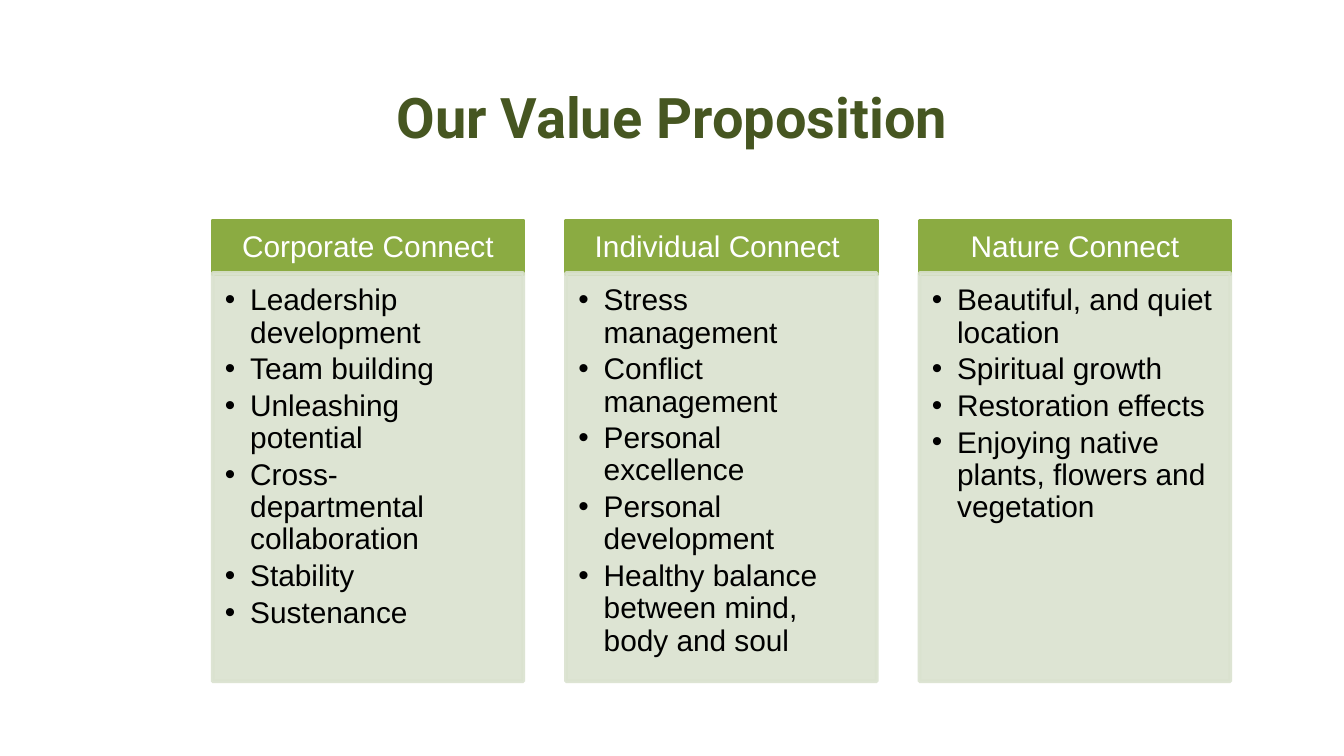
"""Build the value proposition slide with three bulleted columns."""
from lxml.etree import SubElement
from pptx import Presentation
from pptx.dml.color import RGBColor
from pptx.enum.shapes import MSO_SHAPE
from pptx.enum.text import MSO_ANCHOR, PP_ALIGN
from pptx.oxml.ns import qn
from pptx.util import Cm, Pt

DARK_GREEN = RGBColor(0x46, 0x56, 0x21)
GREEN = RGBColor(0x8B, 0xAB, 0x42)
PALE_GREEN = RGBColor(0xDA, 0xE2, 0xCF)
WHITE = RGBColor(0xFF, 0xFF, 0xFF)
BLACK = RGBColor(0x00, 0x00, 0x00)

COLUMNS = {
    "Corporate Connect": [
        "Leadership development", "Team building", "Unleashing potential",
        "Cross-departmental collaboration", "Stability", "Sustenance",
    ],
    "Individual Connect ": [
        "Stress management", "Conflict management", "Personal excellence",
        "Personal development", "Healthy balance between mind, body and soul",
    ],
    "Nature Connect": [
        "Beautiful, and quiet location", "Spiritual growth", "Restoration effects",
        "Enjoying native plants, flowers and vegetation",
    ],
}
LEFT, PITCH, WIDTH = 4.02, 6.68, 5.87


class SlideBuilder:
    def __init__(self, page):
        self.page = page
        self.font = "Arial"
        self.size = 16

    def add_span(self, para, text, color, font=None, size=None, bold=False):
        span = para.add_run()
        span.text = text
        span.font.name = font or self.font
        span.font.size = Pt(size or self.size)
        span.font.bold = bold
        span.font.color.rgb = color

    def frame(self, box, insets, anchor=MSO_ANCHOR.TOP):
        frame = box.text_frame
        frame.word_wrap = True
        frame.vertical_anchor = anchor
        frame.margin_left, frame.margin_top, frame.margin_right, frame.margin_bottom = map(Cm, insets)
        return frame

    def title(self, text):
        box = self.page.shapes.add_textbox(Cm(1.27), Cm(1.32), Cm(22.86), Cm(1.75))
        para = self.frame(box, (0.25, 0.25, 0.25, 0.25)).paragraphs[0]
        para.alignment = PP_ALIGN.CENTER
        para.space_before = Pt(6)
        self.add_span(para, text, DARK_GREEN, "Roboto", 30, True)

    def panel(self, left, top, height, color):
        box = self.page.shapes.add_shape(
            MSO_SHAPE.RECTANGLE, Cm(left), Cm(top), Cm(WIDTH), Cm(height))
        box.shadow.inherit = False
        box.fill.solid()
        box.fill.fore_color.rgb = color
        box.line.color.rgb = color
        box.line.width = Pt(2)
        return box

    def heading(self, left, text):
        box = self.panel(left, 4.17, 1.02, GREEN)
        para = self.frame(box, (0.3, 0.18, 0.3, 0.18), MSO_ANCHOR.MIDDLE).paragraphs[0]
        para.alignment = PP_ALIGN.CENTER
        para.line_spacing = 0.9
        self.add_span(para, text, WHITE)

    def bullets(self, left, items):
        box = self.panel(left, 5.16, 7.72, PALE_GREEN)
        for color in box._element.spPr.iter(qn("a:srgbClr")):
            SubElement(color, qn("a:alpha"), val="90000")
        frame = self.frame(box, (0.23, 0.23, 0.3, 0.36))
        for index, item in enumerate(items):
            para = frame.add_paragraph() if index else frame.paragraphs[0]
            para.alignment = PP_ALIGN.LEFT
            para.level = 1
            para.line_spacing = 0.9
            para.space_after = Pt(2.4)
            properties = para._p.get_or_add_pPr()
            properties.set("marL", str(Cm(0.48)))
            properties.set("indent", str(-Cm(0.48)))
            SubElement(properties, qn("a:buFont"), typeface=self.font)
            SubElement(properties, qn("a:buChar"), char="•")
            self.add_span(para, item, BLACK)


def main():
    deck = Presentation()
    deck.slide_width, deck.slide_height = Cm(25.4), Cm(14.29)
    builder = SlideBuilder(deck.slides.add_slide(deck.slide_layouts[6]))
    builder.title("Our Value Proposition")
    for index, (heading, items) in enumerate(COLUMNS.items()):
        left = LEFT + index * PITCH
        builder.heading(left, heading)
        builder.bullets(left, items)
    deck.save("out.pptx")


if __name__ == "__main__":
    main()
